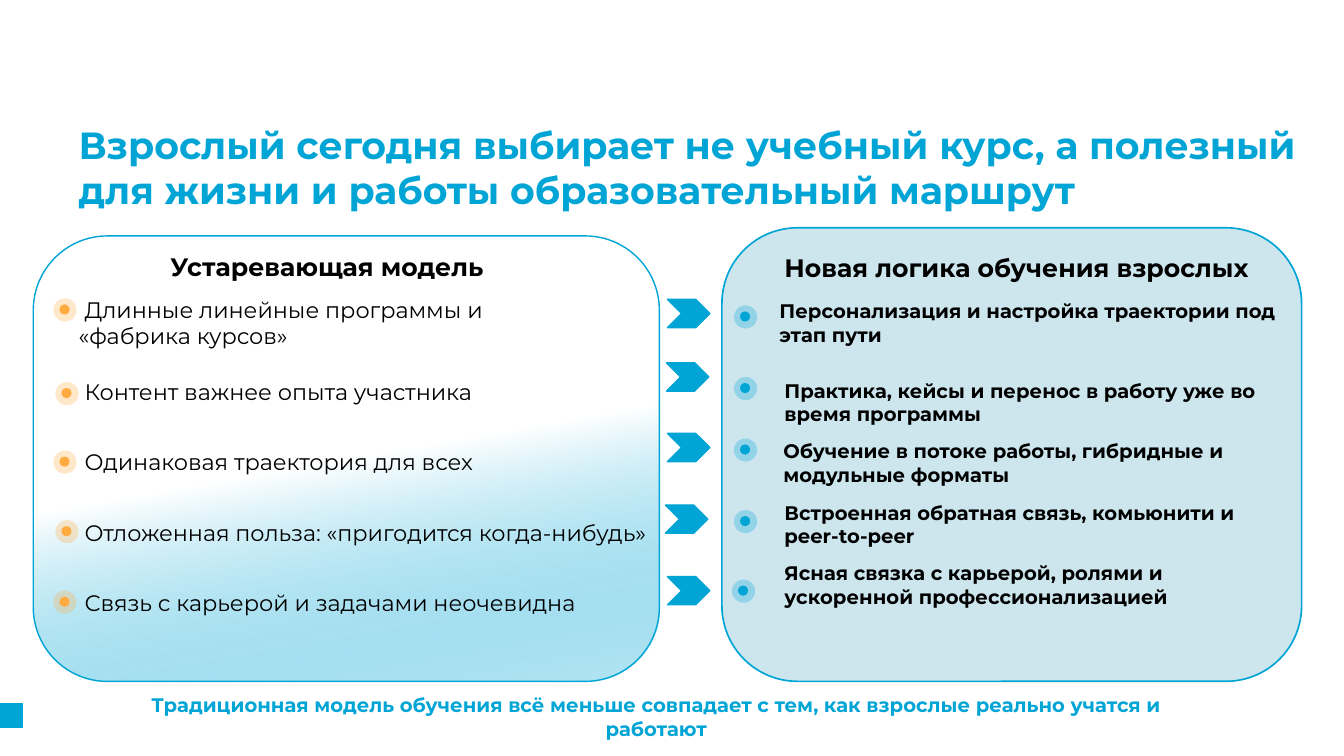
"""Builds a slide that contrasts the ageing and the new logic of adult learning."""
from pptx import Presentation
from pptx import util as u
from pptx.dml import color
from pptx.enum import shapes, text
from pptx.oxml import ns, xmlchemy

PX = 9144
BLUE = color.RGBColor(0x00, 0xA5, 0xD6)
TEAL = color.RGBColor(0x38, 0x9F, 0xBD)
ORANGE = color.RGBColor(0xFF, 0xAB, 0x40)
BLACK = color.RGBColor(0x00, 0x00, 0x00)
WHITE = color.RGBColor(0xFF, 0xFF, 0xFF)

TITLE = "Взрослый сегодня выбирает не учебный курс, а полезный для жизни и работы образовательный маршрут"
FOOTER = "Традиционная модель обучения всё меньше совпадает с тем, как взрослые реально учатся и работают"
OLD_MODEL = [
    ("Длинные линейные программы и «фабрика курсов»", 299, 53, 296),
    ("Контент важнее опыта участника", 367, 55, 379),
    ("Одинаковая траектория для всех", 437, 53, 447),
    ("Отложенная польза: «пригодится когда-нибудь»", 507, 55, 516),
    ("Связь с карьерой и задачами неочевидна", 577, 53, 586),
]
NEW_LOGIC = [
    ("Персонализация и настройка траектории под этап пути", 773, 299, 728, 303),
    ("Практика, кейсы и перенос в работу уже во время программы", 778, 378, 728, 374),
    ("Обучение в потоке работы, гибридные и модульные форматы", 777, 438, 728, 435),
    ("Встроенная обратная связь, комьюнити и peer-to-peer", 778, 499, 728, 506),
    ("Ясная связка с карьерой, ролями и ускоренной профессионализацией", 778, 559, 726, 575),
]
ARROWS = [(662, 297), (661, 360), (662, 430), (660, 501), (662, 572)]


class Deck:
    """Holds the style and the current slide."""

    font = "Montserrat"

    def __init__(self, width, height):
        """Start a deck with one blank slide."""
        self.prs = Presentation()
        self.prs.slide_width, self.prs.slide_height = self.emu(width, height)
        self.s = self.prs.slides.add_slide(self.prs.slide_layouts[6])

    def emu(self, *px):
        """Turn px into EMU."""
        return [u.Emu(v * PX) for v in px]

    def fade(self, sp, percent):
        """Set the opacity of the first fill colour."""
        clr = sp.element.spPr.find(".//" + ns.qn("a:srgbClr"))
        alpha = xmlchemy.OxmlElement("a:alpha")
        alpha.set("val", str(percent * 1000))
        clr.append(alpha)

    def shape(self, kind, box, fill, line=None, opacity=None, parent=None):
        """Add a preset shape with a solid fill."""
        sp = (parent or self.s).shapes.add_shape(kind, *self.emu(*box))
        sp.shadow.inherit = False
        sp.fill.solid()
        sp.fill.fore_color.rgb = fill
        if opacity:
            self.fade(sp, opacity)
        if line:
            sp.line.color.rgb = BLUE
            sp.line.width = u.Pt(line)
        else:
            sp.line.fill.background()
        return sp

    def gradient_panel(self, box):
        """Add a rounded panel that fades from blue to white."""
        sp = self.shape(shapes.MSO_SHAPE.ROUNDED_RECTANGLE, box, WHITE, 1)
        sp.fill.gradient()
        sp.fill.gradient_angle = 100
        for stop, rgb, pos in zip(sp.fill.gradient_stops, (BLUE, WHITE), (0, 0.5)):
            stop.color.rgb = rgb
            stop.position = pos
        self.fade(sp, 28)

    def dot(self, x, y, rgb):
        """Add a round marker with a pale halo."""
        group = self.s.shapes.add_group_shape()
        oval = shapes.MSO_SHAPE.OVAL
        self.shape(oval, (x, y, 23, 23), rgb, opacity=28, parent=group)
        self.shape(oval, (x + 6, y + 6, 10, 10), rgb, parent=group)

    def label(self, words, box, size, rgb=BLACK, bold=True, align=None, indent=0):
        """Add a text box without margins, centred vertically."""
        tf = self.s.shapes.add_textbox(*self.emu(*box)).text_frame
        frame = dict(word_wrap=True, vertical_anchor=text.MSO_ANCHOR.MIDDLE,
                     margin_left=0, margin_top=0, margin_right=0, margin_bottom=0)
        for key, value in frame.items():
            setattr(tf, key, value)
        p = tf.paragraphs[0]
        p.alignment = align
        if indent:
            pPr = p._p.get_or_add_pPr()
            pPr.set("marL", "0")
            pPr.set("indent", str(indent * PX))
        r = p.add_run()
        r.text = words
        for key, value in dict(name=self.font, size=u.Pt(size), bold=bold).items():
            setattr(r.font, key, value)
        r.font.color.rgb = rgb


def main():
    """Build and save the slide."""
    deck = Deck(1333, 750)
    preset = shapes.MSO_SHAPE
    deck.gradient_panel((33, 234, 621, 442))
    deck.shape(preset.ROUNDED_RECTANGLE, (716, 226, 575, 450), TEAL, 1.2, 25)
    deck.shape(preset.RECTANGLE, (0, 698, 22, 24), BLUE, 1)
    deck.label(TITLE, (78, 118, 1216, 95), 27, BLUE)
    deck.label("Устаревающая модель", (169, 250, 444, 28), 18)
    deck.label("Новая логика обучения взрослых", (778, 251, 547, 28), 18)
    for words, y, dot_x, dot_y in OLD_MODEL:
        deck.label(words, (78, y, 575, 42) if y == 507 else (78, y, 495, 42), 16, bold=False, indent=6)
        deck.dot(dot_x, dot_y, ORANGE)
    for words, x, y, dot_x, dot_y in NEW_LOGIC:
        deck.label(words, (x, y, 495, 42), 14)
        deck.dot(dot_x, dot_y, BLUE)
    for x, y in ARROWS:
        deck.shape(preset.CHEVRON, (x, y, 42, 28), BLUE, 1)
    deck.label(FOOTER, (101, 697, 1100, 28), 14, BLUE, align=text.PP_ALIGN.CENTER)
    deck.prs.save("out.pptx")


if __name__ == "__main__":
    main()
